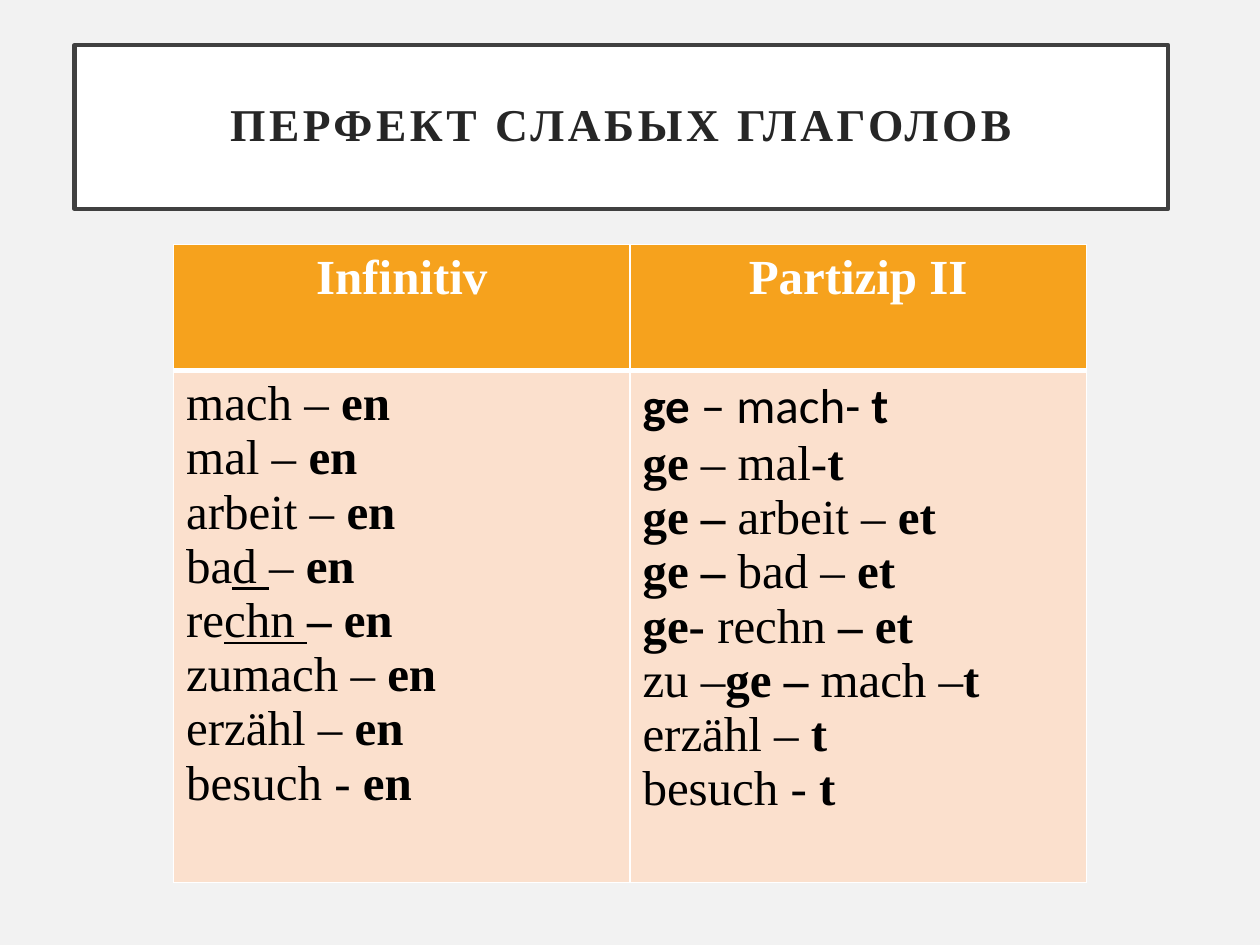
from lxml.etree import SubElement as Sub
from pptx import Presentation
from pptx.dml.color import RGBColor as RGB
from pptx.enum.text import MSO_ANCHOR as Anchor, MSO_AUTO_SIZE as Fit, PP_ALIGN as Align
from pptx.oxml.ns import qn
from pptx.util import Cm, Pt

WHITE = RGB(0xFF, 0xFF, 0xFF)
BLACK = RGB(0, 0, 0)
PALE = RGB(0xF2, 0xF2, 0xF2)
FRAME = RGB(0x40, 0x40, 0x40)
INK = RGB(0x26, 0x26, 0x26)
ORANGE = RGB(0xF6, 0xA2, 0x1D)
PEACH = RGB(0xFB, 0xE0, 0xCD)
SERIF = "Times New Roman"
SANS = "Calibri"

HEADS = ["Infinitiv", "Partizip II"]
VERBS = [
    ["mach – *en*", "mal – *en*", "arbeit – *en*", "ba_d _– *en*",
     "re_chn _*– en*", "zumach – *en*", "erzähl – *en*", "besuch - *en*"],
    ["*ge* – mach-* t*", "*ge* – mal-*t*", "*ge – *arbeit – *et*", "*ge – *bad – *et*",
     "*ge- *rechn* – et*", "zu –*ge – *mach –*t*", "erzähl – *t*", "besuch - *t*"],
]


def style(font, size, color, name=SERIF):
    """Set the size, colour and typeface of a font."""
    font.size, font.name = Pt(size), name
    font.color.rgb = color


def add_title(slide, text):
    """Place the framed title with spaced letters."""
    box = slide.shapes.title
    box.left, box.top, box.width, box.height = Cm(1.5), Cm(0.91), Cm(22.05), Cm(3.3)
    box.fill.solid()
    box.fill.fore_color.rgb = WHITE
    box.line.color.rgb, box.line.width = FRAME, Pt(2.5)
    frame = box.text_frame
    frame.text = text
    frame.word_wrap, frame.auto_size = True, Fit.NONE
    frame.vertical_anchor = Anchor.MIDDLE
    frame.margin_left = frame.margin_right = Cm(0.5)
    frame.margin_top = frame.margin_bottom = Cm(0.5)
    para = frame.paragraphs[0]
    para.alignment, para.line_spacing = Align.CENTER, 0.9
    style(para.font, 26, INK)
    para.font.bold = True
    para.runs[0].font._element.set("spc", "200")


def add_line(para, text, name=SERIF):
    """Write one line, with * around bold and _ around underlined parts."""
    style(para.font, 28, BLACK, name)
    for i, part in enumerate(text.split("*")):
        for j, piece in enumerate(part.split("_")):
            if piece:
                run = para.add_run()
                run.text = piece
                run.font.bold = i % 2 == 1
                if j % 2:
                    run.font.underline = True


def paint(cell, color, top, bottom):
    """Fill a cell and draw its white borders."""
    props = cell._tc.get_or_add_tcPr()
    for side, width in zip("LRTB", (1, 1, top, bottom)):
        line = Sub(props, qn(f"a:ln{side}"), w=str(Pt(width)))
        Sub(Sub(line, qn("a:solidFill")), qn("a:srgbClr"), val=str(WHITE))
    cell.fill.solid()
    cell.fill.fore_color.rgb = color


def add_verbs(slide):
    """Build the table of infinitives and participles."""
    table = slide.shapes.add_table(2, 2, Cm(3.5), Cm(4.93), Cm(18.4), Cm(12.86)).table
    table.rows[0].height, table.rows[1].height = Cm(2.54), Cm(10.32)
    for col, (head, lines) in enumerate(zip(HEADS, VERBS)):
        top, body = table.cell(0, col), table.cell(1, col)
        paint(top, ORANGE, 1, 3)
        paint(body, PEACH, 3, 1)
        top.text = head
        para = top.text_frame.paragraphs[0]
        para.alignment = Align.CENTER
        style(para.font, 28, WHITE)
        para.font.bold = True
        frame = body.text_frame
        for row, text in enumerate(lines):
            para = frame.add_paragraph() if row else frame.paragraphs[0]
            add_line(para, text, SANS if col and not row else SERIF)


def main():
    """Build and save the slide."""
    deck = Presentation()
    deck.slide_width, deck.slide_height = Cm(25.4), Cm(19.05)
    slide = deck.slides.add_slide(deck.slide_layouts[5])
    slide.background.fill.solid()
    slide.background.fill.fore_color.rgb = PALE
    add_title(slide, "ПЕРФЕКТ СЛАБЫХ ГЛАГОЛОВ")
    add_verbs(slide)
    deck.save("out.pptx")


if __name__ == "__main__":
    main()
